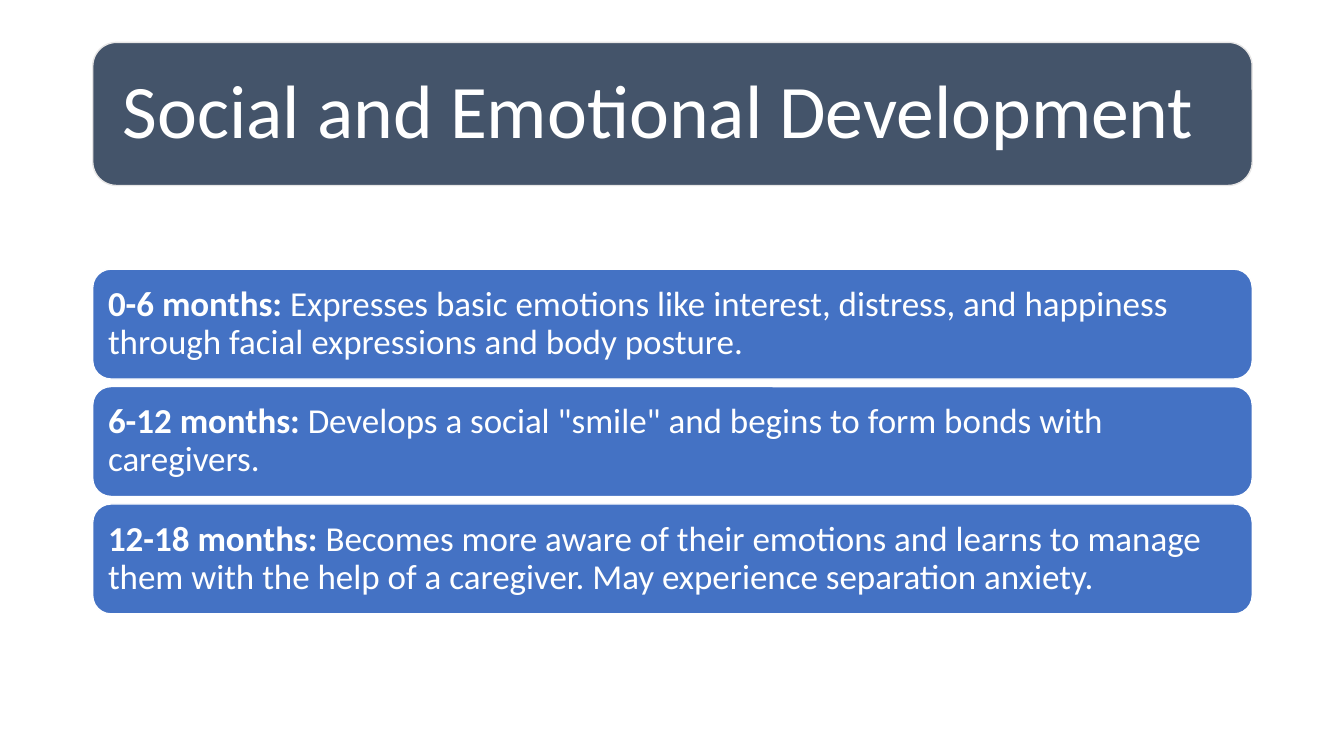
from dataclasses import dataclass

from pptx import Presentation
from pptx.dml.color import RGBColor
from pptx.enum.shapes import MSO_SHAPE
from pptx.enum.text import MSO_ANCHOR, PP_ALIGN
from pptx.shapes.autoshape import Shape
from pptx.slide import Slide
from pptx.text.text import _Paragraph
from pptx.util import Inches, Pt

ROUNDED = MSO_SHAPE.ROUNDED_RECTANGLE
MIDDLE = MSO_ANCHOR.MIDDLE
LEFT = PP_ALIGN.LEFT

WHITE = RGBColor(0xFF, 0xFF, 0xFF)
SLATE = RGBColor(0x44, 0x54, 0x6A)
PALE_GRAY = RGBColor(0xE7, 0xE6, 0xE6)
BLUE = RGBColor(0x44, 0x72, 0xC4)

FONT = "Calibri"
PANEL_LEFT = 0.92
PANEL_WIDTH = 11.5
STAGE_TOP = 2.67
STAGE_HEIGHT = 1.09
STAGE_PITCH = 1.165


@dataclass(frozen=True)
class Stage:
    age: str
    milestone: str


STAGES = [
    Stage("0-6 months:", "Expresses basic emotions like interest, distress, and happiness "
          "through facial expressions and body posture."),
    Stage("6-12 months:", 'Develops a social "smile" and begins to form bonds with caregivers.'),
    Stage("12-18 months:", "Becomes more aware of their emotions and learns to manage them "
          "with the help of a caregiver. May experience separation anxiety."),
]


def add_text(paragraph: _Paragraph, text: str, *, size: float, bold: bool = False) -> None:
    run = paragraph.add_run()
    run.text = text
    run.font.name = FONT
    run.font.size = Pt(size)
    run.font.bold = bold
    run.font.color.rgb = WHITE


def add_panel(slide: Slide, top: float, height: float, *, fill: RGBColor,
              outline: RGBColor, inset: float) -> _Paragraph:
    """Draw a full-width rounded panel and return its paragraph, ready for text."""
    panel: Shape = slide.shapes.add_shape(
        ROUNDED, Inches(PANEL_LEFT), Inches(top), Inches(PANEL_WIDTH), Inches(height))
    panel.shadow.inherit = False
    panel.fill.solid()
    panel.fill.fore_color.rgb = fill
    panel.line.color.rgb = outline
    panel.line.width = Pt(1)

    frame = panel.text_frame
    frame.word_wrap = True
    frame.vertical_anchor = MIDDLE
    frame.margin_left = frame.margin_right = Inches(inset)
    frame.margin_top = frame.margin_bottom = Inches(inset)
    paragraph = frame.paragraphs[0]
    paragraph.alignment = LEFT
    paragraph.line_spacing = 0.9
    return paragraph


def main() -> None:
    presentation = Presentation()
    presentation.slide_width = Inches(13.33)
    presentation.slide_height = Inches(7.5)
    slide = presentation.slides.add_slide(presentation.slide_layouts[6])

    heading = add_panel(slide, 0.42, 1.42, fill=SLATE, outline=PALE_GRAY, inset=0.23)
    add_text(heading, "Social and Emotional Development", size=54)

    for index, stage in enumerate(STAGES):
        entry = add_panel(slide, STAGE_TOP + index * STAGE_PITCH, STAGE_HEIGHT,
                          fill=BLUE, outline=WHITE, inset=0.1)
        add_text(entry, stage.age, size=25, bold=True)
        add_text(entry, f" {stage.milestone}", size=25)

    presentation.save("out.pptx")


if __name__ == "__main__":
    main()
